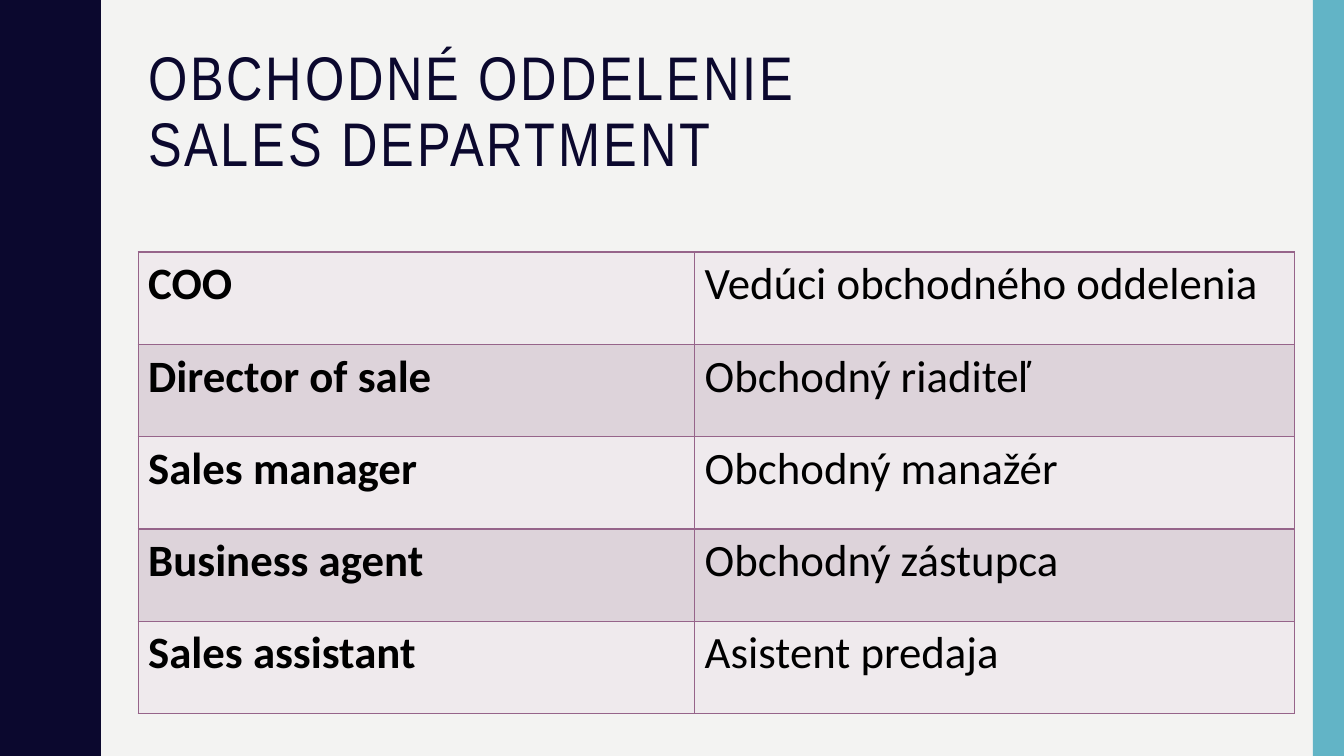
"""Build the sales department vocabulary slide."""
from dataclasses import dataclass

from lxml.etree import SubElement
from pptx import Presentation
from pptx.dml.color import RGBColor
from pptx.enum.shapes import MSO_SHAPE as Preset
from pptx.enum.text import MSO_ANCHOR as Anchor
from pptx.oxml.ns import qn
from pptx.shapes.base import BaseShape
from pptx.slide import Slide
from pptx.table import _Cell as Cell
from pptx.util import Inches, Pt

PAPER = RGBColor(0xF3, 0xF3, 0xF2)
NAVY = RGBColor(0x0B, 0x08, 0x2E)
TEAL = RGBColor(0x62, 0xB4, 0xC6)
BLACK = RGBColor(0, 0, 0)
PLUM = RGBColor(0x96, 0x64, 0x8A)
ROW_FILLS = (RGBColor(0xEF, 0xEA, 0xED), RGBColor(0xDD, 0xD3, 0xDA))

SLIDE_WIDTH, SLIDE_HEIGHT = 13.33, 7.5
WAVE_COUNT = 5
WAVE_PERIOD = SLIDE_HEIGHT / WAVE_COUNT
WAVE_RISE = (
    (0.78, 0), (0.78, 0.07), (0.79, 0.14), (0.8, 0.2), (0.81, 0.25),
    (0.83, 0.29), (0.85, 0.33), (0.87, 0.38), (0.89, 0.42), (0.91, 0.46),
    (0.93, 0.5), (0.95, 0.55), (0.96, 0.61), (0.97, 0.68), (0.97, 0.75),
)
COLUMN_WIDTHS = (5.52, 5.95)


@dataclass(frozen=True)
class Role:
    english: str
    slovak: str


ROLES = (
    Role("COO", "Vedúci obchodného oddelenia"),
    Role("Director of sale", "Obchodný riaditeľ"),
    Role("Sales manager", "Obchodný manažér"),
    Role("Business agent", "Obchodný zástupca"),
    Role("Sales assistant", "Asistent predaja"),
)


def paint(shape: BaseShape, color: RGBColor) -> None:
    shape.shadow.inherit = False
    shape.fill.solid()
    shape.fill.fore_color.rgb = color
    shape.line.fill.background()


def draw_edges(slide: Slide) -> None:
    fall = [(x, WAVE_PERIOD - y) for x, y in reversed(WAVE_RISE[:-1])]
    crest = [*WAVE_RISE, *fall]
    outline = [(x, y + wave * WAVE_PERIOD)
               for wave in range(WAVE_COUNT) for x, y in crest]
    builder = slide.shapes.build_freeform(0, 0, scale=Inches(1))
    builder.add_line_segments([*outline, (0, SLIDE_HEIGHT)], close=True)
    paint(builder.convert_to_shape(), NAVY)

    side_bar = slide.shapes.add_shape(
        Preset.RECTANGLE, Inches(13.02), 0, Inches(0.31), Inches(SLIDE_HEIGHT))
    paint(side_bar, TEAL)


def draw_title(slide: Slide) -> None:
    title = slide.shapes.add_textbox(
        Inches(1.37), Inches(0.42), Inches(11.13), Inches(1.63))
    frame = title.text_frame
    frame.word_wrap = True
    frame.vertical_anchor = Anchor.TOP
    frame.text = "OBCHODNÉ ODDELENIE\vSALES DEPARTMENT"
    heading = frame.paragraphs[0]
    heading.line_spacing = 0.9
    for line in heading.runs:
        line.font.name = "Arial Narrow"
        line.font.size = Pt(44)
        line.font.color.rgb = NAVY
        line.font._element.set("spc", "200")


def add_borders(cell: Cell) -> None:
    properties = cell._tc.get_or_add_tcPr()
    for index, side in enumerate(("a:lnL", "a:lnR", "a:lnT", "a:lnB")):
        border = properties.makeelement(qn(side), {"w": str(Pt(1))})
        fill = SubElement(border, qn("a:solidFill"))
        SubElement(fill, qn("a:srgbClr"), val=str(PLUM))
        properties.insert(index, border)


def fill_cell(cell: Cell, wording: str, background: RGBColor, bold: bool) -> None:
    cell.fill.solid()
    cell.fill.fore_color.rgb = background
    add_borders(cell)
    cell.text_frame.text = wording
    font = cell.text_frame.paragraphs[0].runs[0].font
    font.name = "Calibri"
    font.size = Pt(32)
    font.bold = bold
    font.color.rgb = BLACK


def draw_roles(slide: Slide) -> None:
    glossary = slide.shapes.add_table(
        len(ROLES), len(COLUMN_WIDTHS), Inches(1.37), Inches(2.5),
        Inches(sum(COLUMN_WIDTHS)), Inches(4.58)).table
    glossary.first_row = False
    glossary.horz_banding = False
    for column, width in zip(glossary.columns, COLUMN_WIDTHS):
        column.width = Inches(width)
    for row, role in enumerate(ROLES):
        background = ROW_FILLS[row % 2]
        fill_cell(glossary.cell(row, 0), role.english, background, bold=True)
        fill_cell(glossary.cell(row, 1), role.slovak, background, bold=False)


def main() -> None:
    deck = Presentation()
    deck.slide_width = Inches(SLIDE_WIDTH)
    deck.slide_height = Inches(SLIDE_HEIGHT)
    slide = deck.slides.add_slide(deck.slide_layouts[6])
    slide.background.fill.solid()
    slide.background.fill.fore_color.rgb = PAPER
    draw_edges(slide)
    draw_title(slide)
    draw_roles(slide)
    deck.save("out.pptx")


if __name__ == "__main__":
    main()
